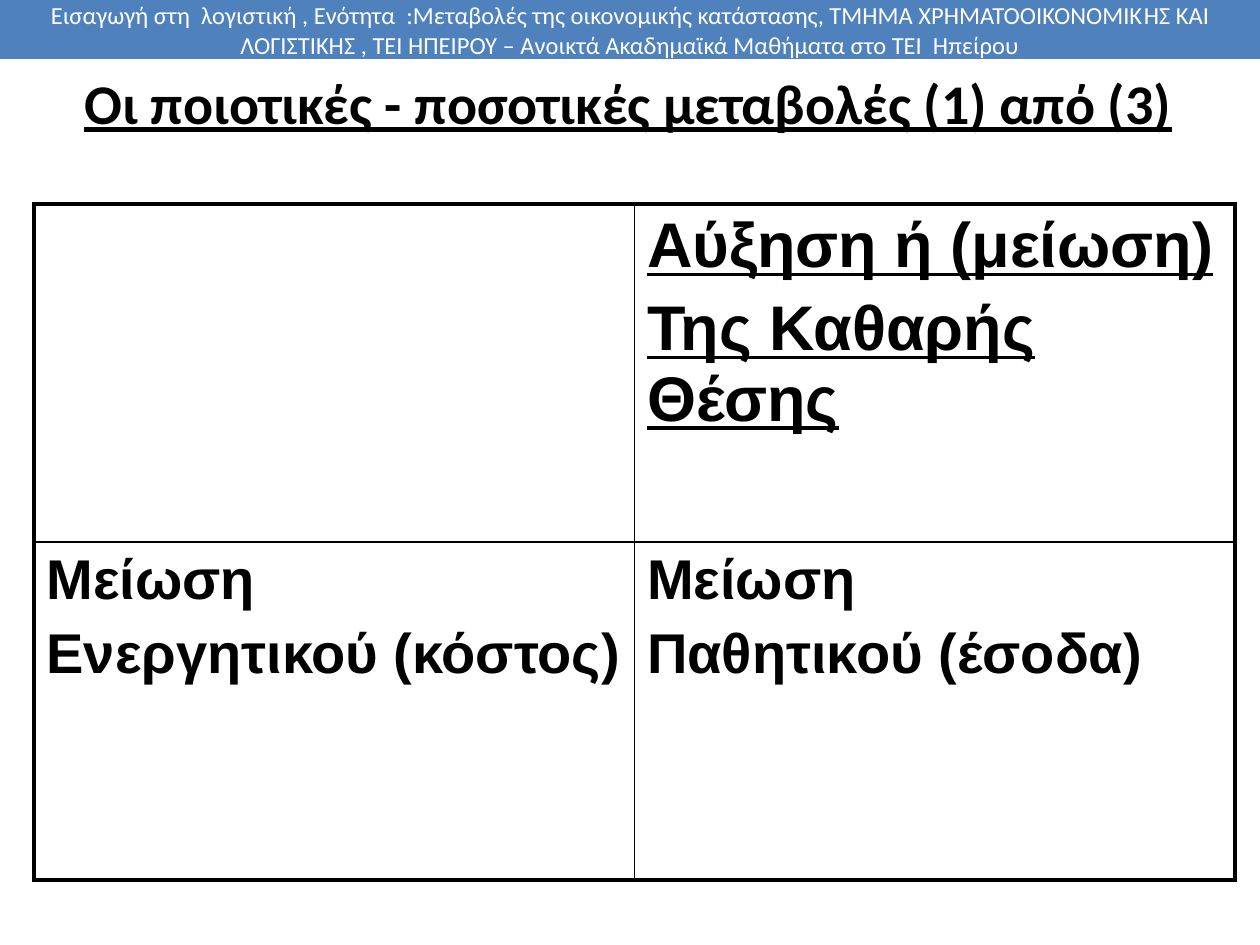
from lxml import etree
from pptx import Presentation
from pptx.dml.color import RGBColor
from pptx.enum.shapes import MSO_SHAPE
from pptx.enum.text import MSO_ANCHOR, PP_ALIGN
from pptx.oxml.ns import qn
from pptx.util import Pt

RECTANGLE = MSO_SHAPE.RECTANGLE
MIDDLE, TOP = MSO_ANCHOR.MIDDLE, MSO_ANCHOR.TOP
CENTER = PP_ALIGN.CENTER
BLUE = RGBColor(0x4F, 0x81, 0xBD)
WHITE = RGBColor(0xFF, 0xFF, 0xFF)
BLACK = RGBColor(0x00, 0x00, 0x00)
OUTER, INNER = 2.25, 1

HEADER = (
    "Εισαγωγή στη  λογιστική , Ενότητα  :Μεταβολές της οικονομικής κατάστασης, "
    "ΤΜΗΜΑ ΧΡΗΜΑΤΟΟΙΚΟΝΟΜΙΚΉΣ ΚΑΙ ΛΟΓΙΣΤΙΚΗΣ , ΤΕΙ ΗΠΕΙΡΟΥ – "
    "Ανοικτά Ακαδημαϊκά Μαθήματα στο ΤΕΙ  Ηπείρου"
)
TITLE = "Οι ποιοτικές - ποσοτικές μεταβολές (1) από (3)"
CHANGES = [
    [[], ["Αύξηση ή (μείωση)", "Της Καθαρής Θέσης"]],
    [["Μείωση", "Ενεργητικού (κόστος)"], ["Μείωση", "Παθητικού (έσοδα)"]],
]


def px(length):
    """Turn pixels into EMU."""
    return round(length * 914400 / 126)


def write(para, text, font, size, color, bold=False, underline=False):
    """Add one formatted run to a paragraph."""
    span = para.add_run()
    span.text = text
    span.font.name = font
    span.font.size = Pt(size)
    span.font.color.rgb = color
    span.font.bold = bold
    span.font.underline = underline


def add_header(page, box):
    """Draw the course banner."""
    banner = page.shapes.add_shape(RECTANGLE, *map(px, box))
    banner.shadow.inherit = False
    banner.fill.solid()
    banner.fill.fore_color.rgb = BLUE
    banner.line.fill.background()
    frame = banner.text_frame
    frame.word_wrap = True
    frame.vertical_anchor = MIDDLE
    para = frame.paragraphs[0]
    para.alignment = CENTER
    write(para, HEADER, "Calibri", 14, WHITE)


def add_title(page, box):
    """Place the title in its placeholder."""
    title = page.shapes.title
    title.left, title.top, title.width, title.height = map(px, box)
    frame = title.text_frame
    frame.word_wrap = True
    frame.margin_top = 0
    frame.vertical_anchor = TOP
    para = frame.paragraphs[0]
    para.alignment = CENTER
    write(para, TITLE, "Calibri", 32, BLACK, bold=True, underline=True)


def set_borders(cell, widths):
    """Give a cell black borders of the widths for its sides."""
    properties = cell._tc.get_or_add_tcPr()
    for index, (side, width) in enumerate(widths.items()):
        line = etree.Element(qn(f"a:ln{side}"), w=str(Pt(width)))
        fill = etree.SubElement(line, qn("a:solidFill"))
        etree.SubElement(fill, qn("a:srgbClr"), val=str(BLACK))
        properties.insert(index, line)


def fill_cell(cell, lines, size, underline):
    """Write the lines of a cell as spaced paragraphs."""
    frame = cell.text_frame
    for index, text in enumerate(lines):
        para = frame.add_paragraph() if index else frame.paragraphs[0]
        if index:
            para.space_before = Pt(size * 0.2)
        write(para, text, "Arial", size, BLACK, bold=True, underline=underline)


def add_changes_table(page, box):
    """Draw the table of changes with a heavy outer frame."""
    table = page.shapes.add_table(2, 2, *map(px, box)).table
    table.first_row = False
    table.horz_banding = False
    for row, cells in enumerate(CHANGES):
        for column, lines in enumerate(cells):
            cell = table.cell(row, column)
            cell.fill.background()
            set_borders(cell, {
                "L": INNER if column else OUTER,
                "R": OUTER if column else INNER,
                "T": INNER if row else OUTER,
                "B": OUTER if row else INNER,
            })
            fill_cell(cell, lines, 32 if row else 36, row == 0)


def main():
    """Build and save the deck."""
    deck = Presentation()
    deck.slide_width, deck.slide_height = px(1260), px(945)
    page = deck.slides.add_slide(deck.slide_layouts[5])
    add_header(page, (0, 0, 1260, 59))
    add_title(page, (42, 68, 1173, 124))
    add_changes_table(page, (34, 204, 1201, 676))
    deck.save("out.pptx")


if __name__ == "__main__":
    main()
